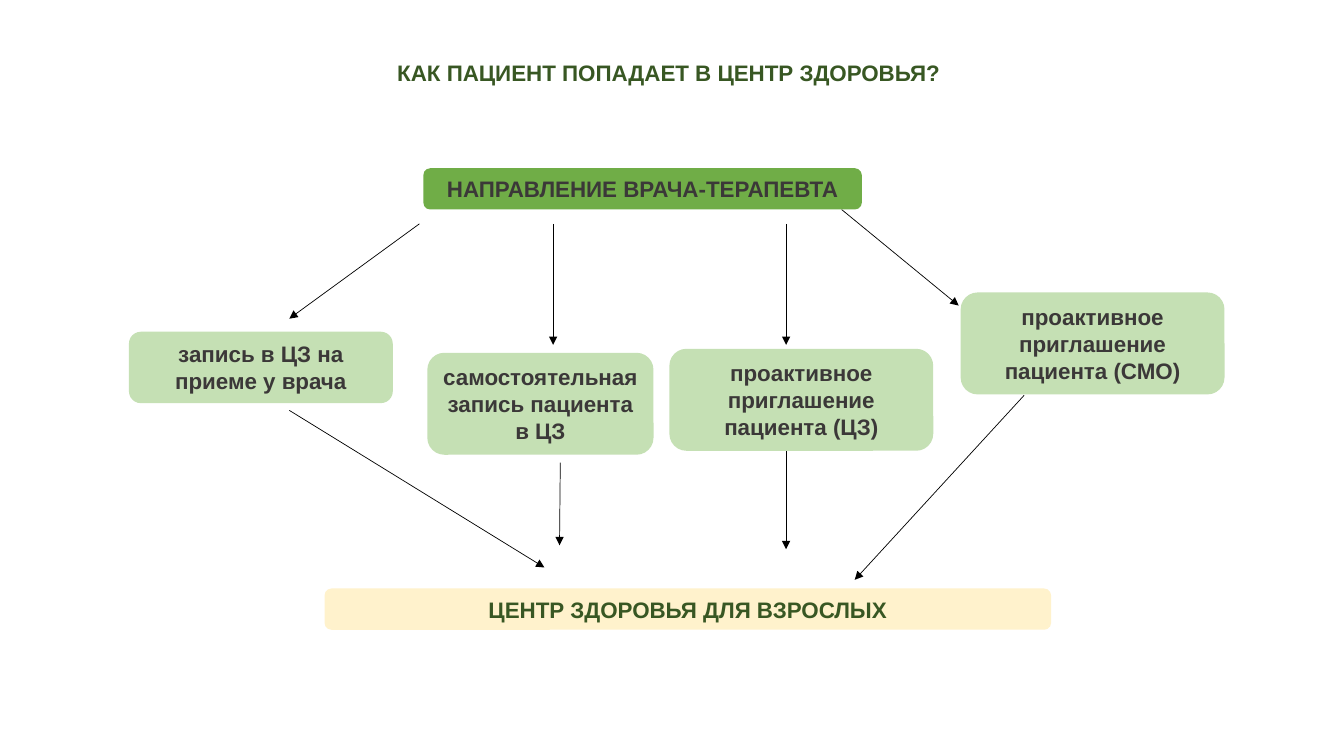
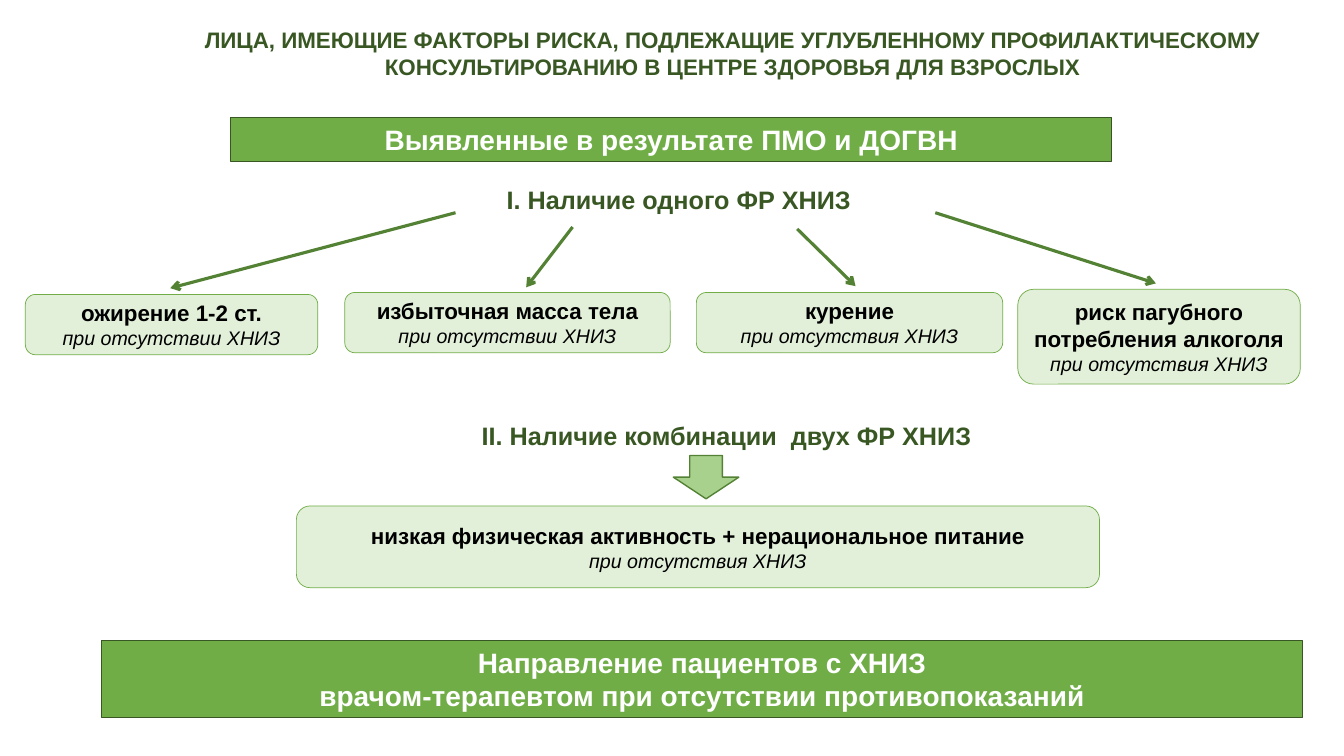
from lxml import etree
from pptx import Presentation
from pptx.dml.color import RGBColor
from pptx.enum import shapes, text
from pptx.oxml import ns
from pptx.util import Cm, Pt

GREEN = RGBColor(0x70, 0xAD, 0x47)
DARK = RGBColor(0x38, 0x57, 0x23)
MOSS = RGBColor(0x54, 0x82, 0x35)
LEAF = RGBColor(0xA9, 0xD1, 0x8E)
SAGE = RGBColor(0xC5, 0xE0, 0xB4)
MINT = RGBColor(0xE2, 0xF0, 0xD9)
CREAM = RGBColor(0xFF, 0xF2, 0xCC)
GREY = RGBColor(0x3B, 0x38, 0x38)
BLACK = RGBColor(0, 0, 0)
WHITE = RGBColor(0xFF, 0xFF, 0xFF)

KIND = shapes.MSO_SHAPE
ROUND, RECT = KIND.ROUNDED_RECTANGLE, KIND.RECTANGLE
LEFT, MID = text.PP_ALIGN.LEFT, text.PP_ALIGN.CENTER

BOLD = {"name": "Arial", "size": Pt(16), "bold": True}
HEAD = {**BOLD, "size": Pt(18)}
BAND = {**BOLD, "size": Pt(20)}
NOTE = {**BOLD, "size": Pt(14), "bold": False, "italic": True}


def box(slide, kind, at, paras, ink=DARK, fill=None, line=None, align=MID):
    """Draw a shape, or a text box if kind is None; at is in cm,
    paras holds (words, font format) pairs, line is (colour, points)."""
    area = [Cm(n) for n in at]
    if kind is None:
        shape = slide.shapes.add_textbox(*area)
    else:
        shape = slide.shapes.add_shape(kind, *area)
        shape.shadow.inherit = False
        shape.fill.solid()
        shape.fill.fore_color.rgb = fill
        if line:
            shape.line.color.rgb = line[0]
            shape.line.width = Pt(line[1])
        else:
            shape.line.fill.background()
    frame = shape.text_frame
    frame.word_wrap = True
    frame.vertical_anchor = text.MSO_ANCHOR.MIDDLE
    for i, (words, form) in enumerate(paras):
        para = frame.add_paragraph() if i else frame.paragraphs[0]
        para.alignment = align
        run = para.add_run()
        run.text = words
        run.font.color.rgb = ink
        for key, value in form.items():
            setattr(run.font, key, value)


def arrow(slide, ends, color, width, head):
    """Draw a straight arrow; ends is x1, y1, x2, y2 in cm."""
    link = slide.shapes.add_connector(
        shapes.MSO_CONNECTOR.STRAIGHT, *[Cm(n) for n in ends])
    link.line.color.rgb = color
    link.line.width = Pt(width)
    tail = etree.SubElement(link.line._get_or_add_ln(), ns.qn("a:tailEnd"))
    tail.set("type", head)
    etree.SubElement(link._element.spPr, ns.qn("a:effectLst"))


deck = Presentation()
deck.slide_width, deck.slide_height = Cm(33.87), Cm(19.05)
titles = [
    ("КАК ПАЦИЕНТ ПОПАДАЕТ В ЦЕНТР ЗДОРОВЬЯ?", (7.7, 1.35, 18.31, 0.94)),
    ("ЛИЦА, ИМЕЮЩИЕ ФАКТОРЫ РИСКА, ПОДЛЕЖАЩИЕ УГЛУБЛЕННОМУ "
     "ПРОФИЛАКТИЧЕСКОМУ КОНСУЛЬТИРОВАНИЮ В ЦЕНТРЕ ЗДОРОВЬЯ ДЛЯ ВЗРОСЛЫХ",
     (4.29, 0.53, 28.35, 1.63)),
]
pages = []
for words, at in titles:
    page = deck.slides.add_slide(deck.slide_layouts[6])
    box(page, None, at, [(words, BOLD)])
    pages.append(page)
route, risk = pages

# Slide 1: ways into the centre
for ends in [
    (10.57, 5.64, 7.29, 8.03),
    (13.94, 5.64, 13.94, 8.69),
    (19.81, 5.64, 19.81, 8.69),
    (21.21, 5.28, 24.16, 7.7),
    (7.29, 10.34, 13.72, 14.3),
    (14.12, 11.66, 14.1, 13.74),
    (19.81, 10.8, 19.81, 13.84),
    (25.81, 9.96, 21.54, 14.61),
]:
    arrow(route, ends, BLACK, 0.5, "triangle")

for words, at, ink, fill in [
    ("НАПРАВЛЕНИЕ ВРАЧА-ТЕРАПЕВТА", (10.67, 4.24, 11.05, 1.04), GREY, GREEN),
    ("запись в ЦЗ на приеме у врача", (3.25, 8.36, 6.65, 1.8), GREY, SAGE),
    ("самостоятельная запись пациента в ЦЗ",
     (10.77, 8.89, 5.7, 2.57), GREY, SAGE),
    ("проактивное приглашение пациента (ЦЗ)",
     (16.87, 8.79, 6.65, 2.57), GREY, SAGE),
    ("проактивное приглашение пациента (СМО)",
     (24.21, 7.37, 6.65, 2.57), GREY, SAGE),
    ("ЦЕНТР ЗДОРОВЬЯ ДЛЯ ВЗРОСЛЫХ", (8.18, 14.83, 18.31, 1.04), DARK, CREAM),
]:
    box(route, ROUND, at, [(words, BOLD)], ink, fill)

# Slide 2: risk factors
for lines, at in [
    (["Выявленные в результате ПМО и ДОГВН"], (5.82, 2.95, 22.2, 1.12)),
    (["Направление пациентов с ХНИЗ",
      "врачом-терапевтом при отсутствии противопоказаний"],
     (2.57, 16.13, 30.25, 1.96)),
]:
    box(risk, RECT, at, [(words, BAND) for words in lines],
        WHITE, GREEN, (DARK, 0.75))

for words, at in [
    ("I. Наличие одного ФР ХНИЗ", (12.52, 4.52, 10.6, 1.02)),
    ("II. Наличие комбинации  двух ФР ХНИЗ", (11.89, 10.46, 13.16, 1.02)),
]:
    box(risk, None, at, [(words, HEAD)], align=LEFT)

for words, note, at in [
    ("ожирение 1-2 ст.", "при отсутствии ХНИЗ", (0.64, 7.42, 7.37, 1.52)),
    ("избыточная масса тела", "при отсутствии ХНИЗ", (8.69, 7.37, 8.2, 1.52)),
    ("курение", "при отсутствия ХНИЗ", (17.55, 7.37, 7.72, 1.52)),
    ("риск пагубного потребления алкоголя", "при отсутствия ХНИЗ",
     (25.65, 7.29, 7.12, 2.39)),
    ("низкая физическая активность + нерациональное питание",
     "при отсутствия ХНИЗ", (7.47, 12.75, 20.24, 2.06)),
]:
    box(risk, ROUND, at, [(words, BOLD), (note, NOTE)],
        BLACK, MINT, (GREEN, 0.5))

for ends in [
    (11.48, 5.36, 4.29, 7.26),
    (14.43, 5.72, 13.26, 7.24),
    (20.09, 5.77, 21.56, 7.21),
    (23.57, 5.36, 29.13, 7.14),
]:
    arrow(risk, ends, MOSS, 2.25, "arrow")

box(risk, KIND.DOWN_ARROW, (16.97, 11.48, 1.65, 1.09), [],
    fill=LEAF, line=(MOSS, 1))

deck.save("out.pptx")
